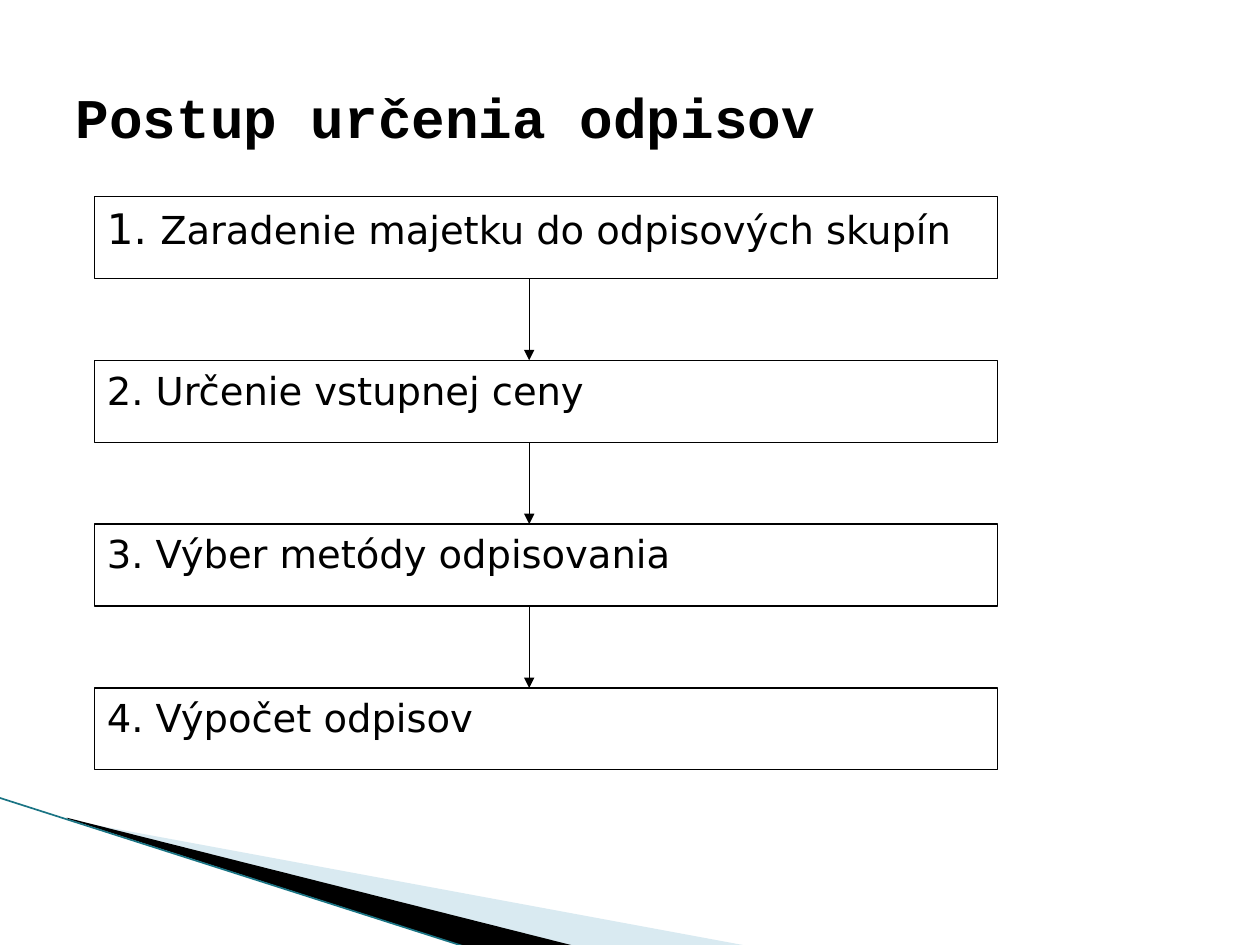
from dataclasses import dataclass

from lxml import etree
from pptx import Presentation
from pptx.dml.color import RGBColor
from pptx.enum.shapes import MSO_CONNECTOR, MSO_SHAPE
from pptx.enum.text import MSO_ANCHOR, PP_ALIGN
from pptx.oxml.ns import qn
from pptx.util import Inches, Pt

RECTANGLE = MSO_SHAPE.RECTANGLE
STRAIGHT = MSO_CONNECTOR.STRAIGHT
LEFT = PP_ALIGN.LEFT
TOP, MIDDLE = MSO_ANCHOR.TOP, MSO_ANCHOR.MIDDLE


@dataclass(frozen=True)
class Theme:
    ink: RGBColor = RGBColor(0x00, 0x00, 0x00)
    paper: RGBColor = RGBColor(0xFF, 0xFF, 0xFF)
    pale_wedge: RGBColor = RGBColor(0xD9, 0xEA, 0xF1)
    edge: RGBColor = RGBColor(0x1A, 0x74, 0x84)
    title_font: str = "Courier New"
    step_font: str = "DejaVu Sans"
    title_size: Pt = Pt(32)
    first_number_size: Pt = Pt(24)
    step_size: Pt = Pt(22)
    line_width: Pt = Pt(0.75)
    edge_width: Pt = Pt(0.95)


theme = Theme()


def add_line(slide, start, end, color, width):
    line = slide.shapes.add_connector(STRAIGHT, *map(Inches, start + end))
    line.line.color.rgb = color
    line.line.width = width
    etree.SubElement(line._element.spPr, qn("a:effectLst"))
    return line


def style_run(run, font_name, size):
    run.font.name = font_name
    run.font.size = size
    run.font.color.rgb = theme.ink


prs = Presentation()
prs.slide_width, prs.slide_height = Inches(10), Inches(7.5)
slide = prs.slides.add_slide(prs.slide_layouts[5])

# Corner decoration: two wedges and a thin edge
wedges = [
    (theme.pale_wedge, [(0.55, 6.51), (5.95, 7.51), (4.56, 7.51), (0.55, 6.5)]),
    (theme.ink, [(0.53, 6.49), (4.57, 7.51), (3.72, 7.52), (0.54, 6.5)]),
]
for color, corners in wedges:
    points = [(Inches(x), Inches(y)) for x, y in corners]
    builder = slide.shapes.build_freeform(*points[0])
    builder.add_line_segments(points[1:], close=True)
    wedge = builder.convert_to_shape()
    wedge.shadow.inherit = False
    wedge.fill.solid()
    wedge.fill.fore_color.rgb = color
    wedge.line.fill.background()
add_line(slide, (-0.01, 6.33), (3.71, 7.52), theme.edge, theme.edge_width)

# Title
title = slide.shapes.title
title.left, title.top = Inches(0.5), Inches(0.3)
title.width, title.height = Inches(9), Inches(1.25)
title.text_frame.text = "Postup určenia odpisov"
title.text_frame.vertical_anchor = MIDDLE
heading = title.text_frame.paragraphs[0]
heading.alignment = LEFT
style_run(heading.runs[0], theme.title_font, theme.title_size)
heading.runs[0].font.bold = True

# Steps, evenly spaced, with an arrow from each to the next
steps = [
    "Zaradenie majetku do odpisových skupín",
    "Určenie vstupnej ceny",
    "Výber metódy odpisovania",
    "Výpočet odpisov",
]
step_left, first_top, step_width, step_height = 0.75, 1.56, 7.17, 0.65
pitch = 1.3
arrow_x = 4.2

for index, wording in enumerate(steps):
    top = first_top + index * pitch
    step = slide.shapes.add_shape(
        RECTANGLE, Inches(step_left), Inches(top), Inches(step_width), Inches(step_height)
    )
    step.shadow.inherit = False
    step.fill.solid()
    step.fill.fore_color.rgb = theme.paper
    step.line.color.rgb = theme.ink
    step.line.width = theme.line_width
    step.text_frame.vertical_anchor = TOP
    paragraph = step.text_frame.paragraphs[0]
    paragraph.alignment = LEFT
    number_size = theme.first_number_size if index == 0 else theme.step_size
    for text, size in [(f"{index + 1}. ", number_size), (wording, theme.step_size)]:
        run = paragraph.add_run()
        run.text = text
        style_run(run, theme.step_font, size)

    if index < len(steps) - 1:
        arrow = add_line(
            slide, (arrow_x, top + step_height), (arrow_x, top + pitch),
            theme.ink, theme.line_width,
        )
        etree.SubElement(arrow.line._get_or_add_ln(), qn("a:tailEnd"), type="triangle")

prs.save("out.pptx")
